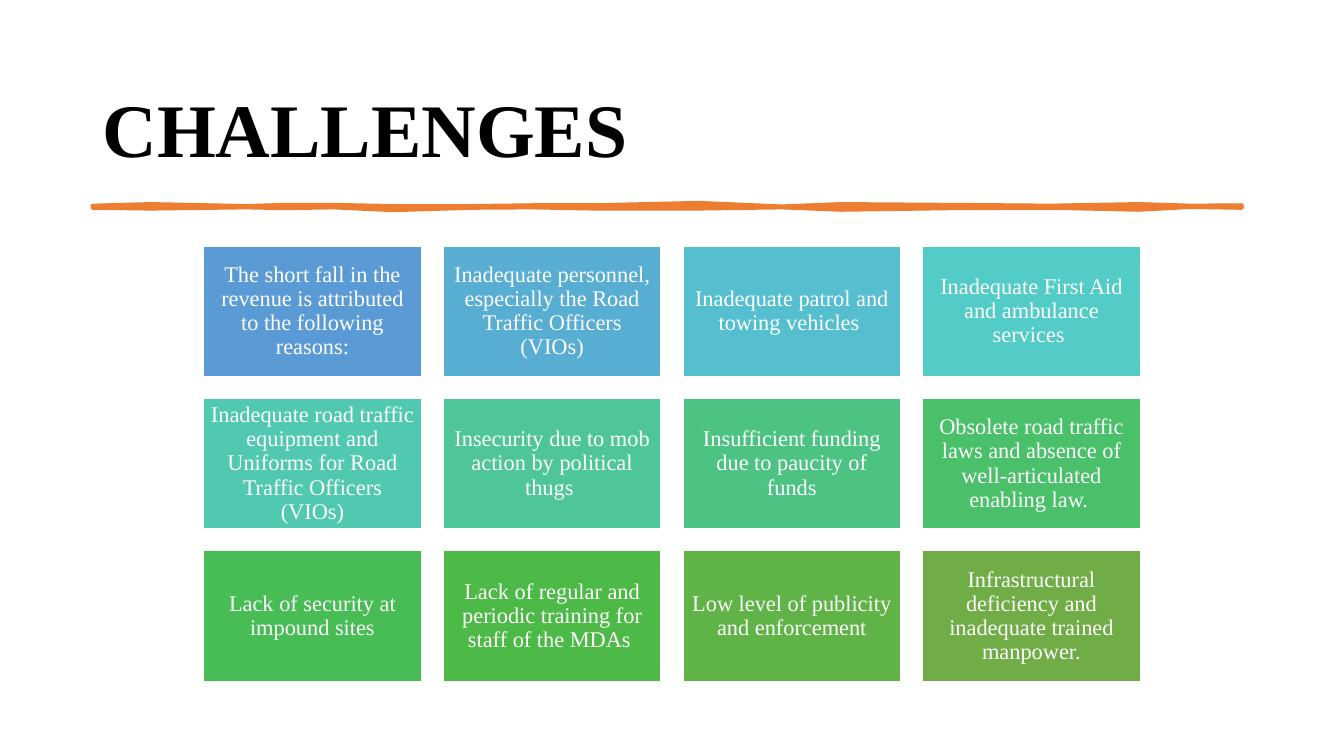
from pptx import Presentation
from pptx import util as u
from pptx.dml.color import RGBColor
from pptx.enum import shapes, text
from lxml import etree

FONT = "Times New Roman"
COLORS = {"title": "000000", "rule": "ED7D31", "white": "FFFFFF"}
TITLE = "CHALLENGES"

# Tile text and fill, row by row
TILES = [
    ("The short fall in the revenue is attributed to the following reasons:", "5B9BD5"),
    ("Inadequate personnel, especially the Road Traffic Officers (VIOs)", "58ADD2"),
    ("Inadequate patrol and towing vehicles ", "56BFCF"),
    ("Inadequate First Aid and ambulance services ", "53CCC8"),
    ("Inadequate road traffic equipment and Uniforms for Road Traffic Officers (VIOs)", "51C9B0"),
    ("Insecurity due to mob action by political thugs ", "4FC699"),
    ("Insufficient funding due to paucity of funds", "4CC382"),
    ("Obsolete road traffic laws and absence of well-articulated enabling law. ", "4AC06B"),
    ("Lack of security at impound sites", "48BC55"),
    ("Lack of regular and periodic training for staff of the MDAs ", "4DB946"),
    ("Low level of publicity and enforcement", "60B347"),
    ("Infrastructural deficiency and inadequate trained manpower.", "70AD47"),
]
COLUMNS = 4
GRID_LEFT, GRID_TOP = 5.13, 6.2
TILE_W, TILE_H, GAP = 5.49, 3.29, 0.55

# Brush stroke in cm: x, upper edge, lower edge
STROKE = [
    (2.34, 5.19, 5.23), (3.8, 5.15, 5.25), (6.2, 5.2, 5.22), (7.2, 5.17, 5.24),
    (8.4, 5.17, 5.22), (9.9, 5.2, 5.29), (11.9, 5.2, 5.23), (13.4, 5.18, 5.22),
    (15, 5.18, 5.25), (17.6, 5.12, 5.25), (19.7, 5.21, 5.22), (21.2, 5.15, 5.28),
    (24, 5.17, 5.24), (26.5, 5.19, 5.23), (28.7, 5.15, 5.28), (30, 5.19, 5.21),
    (31.29, 5.18, 5.23),
]


def paint(sp, fill, line, width):
    sp.shadow.inherit = False
    sp.fill.solid()
    sp.fill.fore_color.rgb = RGBColor.from_string(fill)
    sp.line.color.rgb = RGBColor.from_string(line)
    sp.line.width = u.Pt(width)


def write(tf, words, size, color, align, bold=False):
    tf.word_wrap = True
    tf.auto_size = text.MSO_AUTO_SIZE.NONE
    tf.vertical_anchor = text.MSO_ANCHOR.MIDDLE
    p = tf.paragraphs[0]
    p.alignment = align
    p.line_spacing = 0.9
    r = p.add_run()
    r.text = words
    r.font.name = FONT
    r.font.size = u.Pt(size)
    r.font.bold = bold
    r.font.color.rgb = RGBColor.from_string(color)


def add_title(slide):
    sp = slide.shapes.title
    sp.left, sp.top, sp.width, sp.height = u.Cm(2.33), u.Cm(1.01), u.Cm(29.21), u.Cm(4.7)
    write(sp.text_frame, TITLE, 54, COLORS["title"], text.PP_ALIGN.LEFT, bold=True)


def add_stroke(slide):
    upper = [(u.Cm(x), u.Cm(top)) for x, top, _ in STROKE]
    lower = [(u.Cm(x), u.Cm(bottom)) for x, _, bottom in reversed(STROKE)]
    builder = slide.shapes.build_freeform(*upper[0])
    builder.add_line_segments(upper[1:] + lower, close=True)
    sp = builder.convert_to_shape()
    paint(sp, COLORS["rule"], COLORS["rule"], 3.25)
    ln = sp.line.fill._xPr
    etree.SubElement(ln, ln.tag.replace("}ln", "}round"))


def add_tile(slide, index, words, fill):
    row, col = divmod(index, COLUMNS)
    sp = slide.shapes.add_shape(
        shapes.MSO_SHAPE.RECTANGLE,
        u.Cm(GRID_LEFT + col * (TILE_W + GAP)), u.Cm(GRID_TOP + row * (TILE_H + GAP)),
        u.Cm(TILE_W), u.Cm(TILE_H))
    paint(sp, fill, COLORS["white"], 1)
    tf = sp.text_frame
    tf.margin_left = tf.margin_right = tf.margin_top = tf.margin_bottom = u.Cm(0.17)
    write(tf, words, 16, COLORS["white"], text.PP_ALIGN.CENTER)


def main():
    prs = Presentation()
    prs.slide_width, prs.slide_height = u.Cm(33.87), u.Cm(19.05)
    slide = prs.slides.add_slide(prs.slide_layouts[5])
    add_title(slide)
    add_stroke(slide)
    for index, (words, fill) in enumerate(TILES):
        add_tile(slide, index, words, fill)
    prs.save("out.pptx")


if __name__ == "__main__":
    main()
